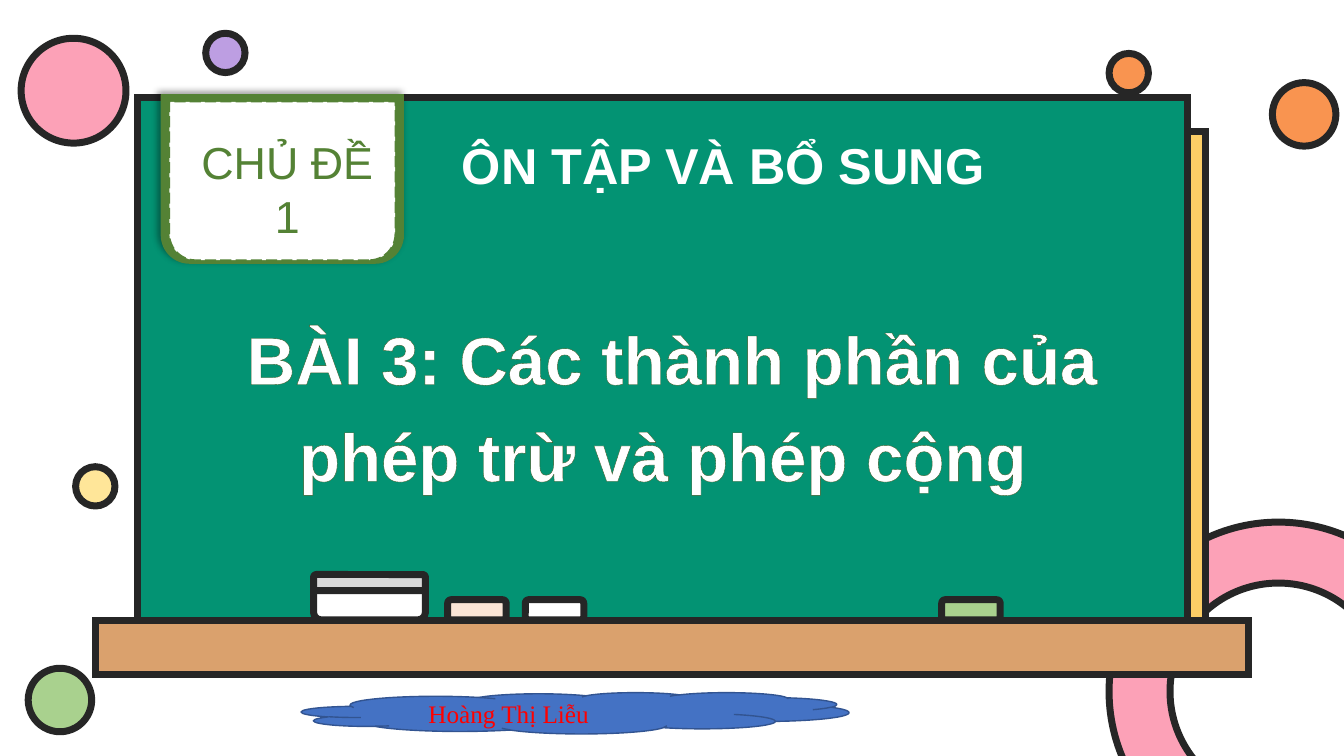
from lxml.etree import SubElement
from pptx import Presentation
from pptx.dml.color import RGBColor
from pptx.enum.dml import MSO_LINE
from pptx.enum.shapes import MSO_SHAPE
from pptx.enum.text import MSO_ANCHOR, MSO_AUTO_SIZE, PP_ALIGN
from pptx.oxml import parse_xml
from pptx.oxml.ns import nsdecls, qn
from pptx.util import Pt

PX = 9144  # 100 px to the inch
INK = "262626"
WHITE = "FFFFFF"
PINK = "FCA1B7"
ORANGE = "F99450"
LEAF = "A9D18E"
MOSS = "548235"

prs = Presentation()
prs.slide_width, prs.slide_height = 1333 * PX, 750 * PX
slide = prs.slides.add_slide(prs.slide_layouts[5])
shapes = slide.shapes


def draw(kind, box, fill, line=INK, weight=5):
    shape = shapes.add_shape(kind, *(n * PX for n in box))
    shape.shadow.inherit = False
    shape.fill.solid()
    shape.fill.fore_color.rgb = RGBColor.from_string(fill)
    shape.line.color.rgb = RGBColor.from_string(line)
    shape.line.width = Pt(weight)
    return shape


def write(holder, box, text, size, color, font="Arial", bold=False,
          align=PP_ALIGN.CENTER, spacing=1.0):
    """Place a text holder and fill it with one formatted run."""
    holder.left, holder.top, holder.width, holder.height = (n * PX for n in box)
    frame = holder.text_frame
    frame.word_wrap = True
    frame.auto_size = MSO_AUTO_SIZE.NONE
    frame.vertical_anchor = MSO_ANCHOR.TOP
    paragraph = frame.paragraphs[0]
    paragraph.alignment = align
    paragraph.line_spacing = spacing
    run = paragraph.add_run()
    run.text = text
    run.font.size = Pt(size)
    run.font.name = font
    run.font.bold = bold
    run.font.color.rgb = RGBColor.from_string(color)
    return run


# Ring behind the board
ring = draw(MSO_SHAPE.DONUT, (1100, 518, 336, 336), PINK)
ring.adjustments[0] = 0.18

# Board with its yellow edge and wooden ledge
for box, fill in [
    ((168, 130, 1028, 522), "FDCE66"),
    ((136, 97, 1042, 545), "039373"),
    ((95, 616, 1143, 53), "DAA16D"),
]:
    panel = draw(MSO_SHAPE.RECTANGLE, box, fill)
    SubElement(panel.line._ln, qn("a:miter"), lim="800000")

# Dots around the board
for left, top, size, fill in [
    (21, 38, 104, PINK),
    (1262, 82, 63, ORANGE),
    (28, 663, 63, LEAF),
    (75, 463, 39, "FFE699"),
    (204, 33, 39, "BD9EE2"),
    (1100, 53, 39, ORANGE),
]:
    draw(MSO_SHAPE.OVAL, (left, top, size, size), fill)

# Eraser and chalks on the ledge
for height, fill in [(45, WHITE), (16, "D9D9D9")]:
    draw(MSO_SHAPE.ROUNDED_RECTANGLE, (311, 570, 111, height), fill)
for left, fill in [(444, "FBE5D6"), (521, WHITE), (934, LEAF)]:
    draw(MSO_SHAPE.ROUNDED_RECTANGLE, (left, 595, 58, 20), fill)

# Lesson title, brought in front of the board
lesson = write(shapes.title, (152, 294, 1030, 194),
               "BÀI 3: Các thành phần của phép trừ và phép cộng ",
               48, WHITE, bold=True, spacing=1.2)
lesson.font._element.insert(0, parse_xml(
    f'<a:ln {nsdecls("a")} w="22225"><a:solidFill>'
    '<a:srgbClr val="385723"/></a:solidFill></a:ln>'))
shapes._spTree.append(shapes.title._element)

# Topic tag hanging from the top of the board
tag = draw(MSO_SHAPE.ROUND_2_SAME_RECTANGLE, (160, 94, 240, 167), MOSS, MOSS, 1)
tag_face = draw(MSO_SHAPE.ROUND_2_SAME_RECTANGLE, (168, 101, 224, 157), WHITE, MOSS, 1)
tag.rotation = tag_face.rotation = 180
tag_face.line.dash_style = MSO_LINE.LONG_DASH
tag._element.spPr.find(qn("a:effectLst")).append(parse_xml(
    f'<a:outerShdw {nsdecls("a")} blurRad="63500" dist="38100" dir="13500000" '
    'rotWithShape="0"><a:srgbClr val="000000"><a:alpha val="40000"/></a:srgbClr>'
    '</a:outerShdw>'))
write(shapes.add_textbox(0, 0, 0, 0), (177, 129, 216, 100), "CHỦ ĐỀ 1", 32, MOSS)

write(shapes.add_textbox(0, 0, 0, 0), (341, 128, 753, 71), "ÔN TẬP VÀ BỔ SUNG",
      36, WHITE, bold=True)

# Teacher's name on a cloud
draw(MSO_SHAPE.CLOUD, (299, 687, 543, 41), "4472C4", "325491", 1)
write(shapes.add_textbox(0, 0, 0, 0), (415, 688, 298, 40), "Hoàng Thị Liễu",
      18, "FF0000", font="Times New Roman", align=PP_ALIGN.LEFT)

prs.save("out.pptx")
